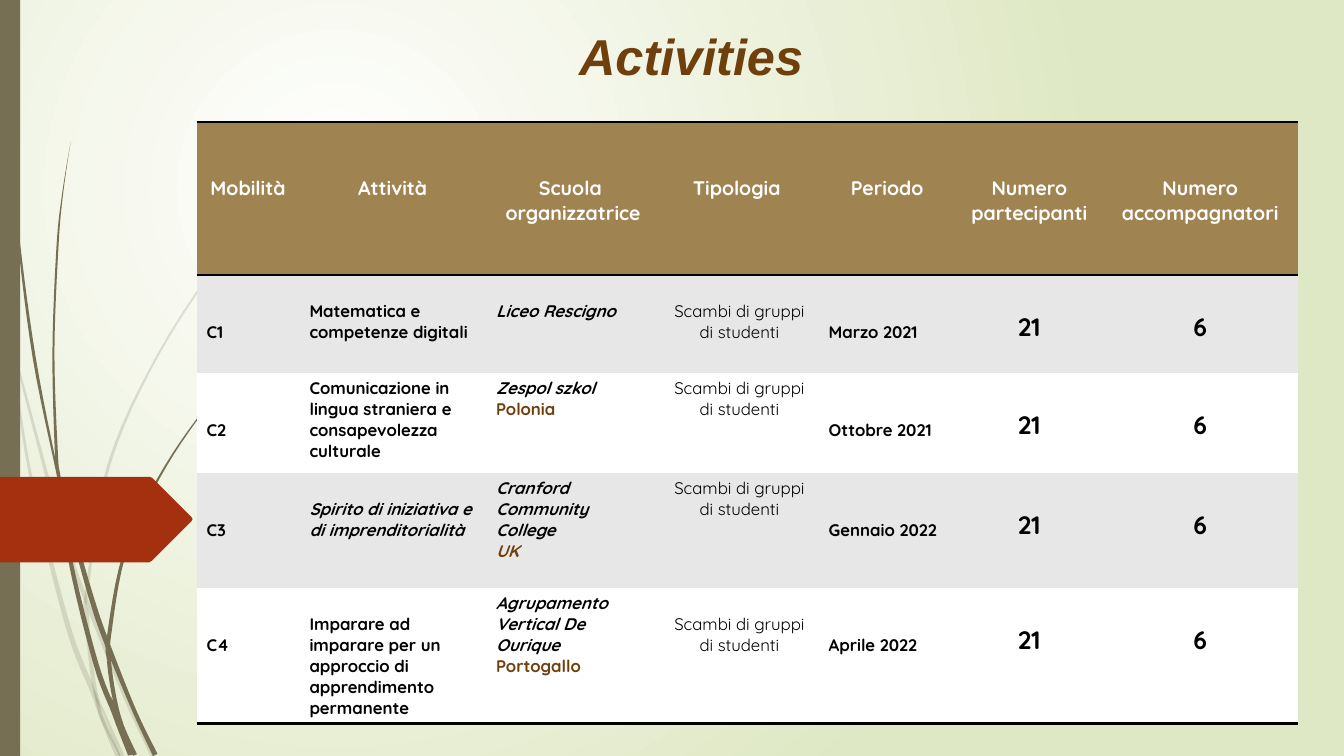
from dataclasses import dataclass
from math import hypot
from typing import NamedTuple

from lxml.etree import SubElement
from pptx import Presentation
from pptx.dml.color import RGBColor
from pptx.enum.shapes import MSO_SHAPE
from pptx.enum.text import PP_ALIGN
from pptx.oxml import parse_xml
from pptx.oxml.ns import nsdecls, qn
from pptx.util import Emu, Pt

PX = 9144
CURVE_STEPS = 6
COLORS = {
    "white": "FFFFFF", "black": "000000", "leaf": "DFE8C4", "grass": "766F54",
    "arrow": "A53010", "header": "9F8351", "band": "E7E7E7", "brown": "6F3F0C",
}
BODY_FONT = "Quicksand"
PLAIN_TABLE_STYLE = "{2D5ABB26-0587-4C30-8999-92F81FD0307C}"
COLUMN_WIDTHS = (102, 185, 173, 157, 136, 146, 193)
ROW_HEIGHTS = (152, 97, 99, 114, 135)
HEADINGS = ("Mobilità", "Attività", "Scuola \norganizzatrice", "Tipologia ", "Periodo",
            "Numero partecipanti", "Numero accompagnatori")


class Node(NamedTuple):
    x: float
    y: float
    width: float


@dataclass
class Blade:
    opacity: int
    joints: tuple[int, ...]
    nodes: list[Node]


@dataclass
class CellText:
    text: str
    lead_lines: int
    size: int = 12
    bold: bool = True
    italic: bool = False
    centered: bool = False
    color: str = "black"


@dataclass
class Activity:
    code: str
    subject: str
    school: str
    country: str
    period: str
    leads: tuple[int, int, int]
    italic_subject: bool = False
    italic_country: bool = False

    def cells(self) -> list[CellText]:
        subject_lead, school_lead, kind_lead = self.leads
        school = f"{self.school}\n{self.country}" if self.country else self.school
        return [
            CellText(self.code, 2),
            CellText(self.subject, subject_lead, italic=self.italic_subject),
            CellText(school, school_lead, italic=True),
            CellText("Scambi di gruppi di studenti", kind_lead, bold=False, centered=True),
            CellText(self.period, 2),
            CellText("21", 1, size=18, centered=True),
            CellText("6", 1, size=18, centered=True),
        ]


ACTIVITIES = (
    Activity("C1", "Matematica e competenze digitali", "Liceo Rescigno", "", "Marzo 2021", (1, 1, 1)),
    Activity("C2", "Comunicazione in lingua straniera e consapevolezza culturale",
             "Zespol szkol", "Polonia", "Ottobre 2021", (0, 0, 0)),
    Activity("C3", "Spirito di iniziativa e di imprenditorialità", "Cranford Community College",
             "UK", "Gennaio 2022", (1, 0, 0), italic_subject=True, italic_country=True),
    Activity("C4", "Imparare ad imparare per un approccio di apprendimento permanente",
             "Agrupamento Vertical De Ourique", "Portogallo", "Aprile 2022", (1, 0, 1)),
)
BLADES = (
    Blade(20, (2, 4), [Node(0, 290, 4), Node(9, 341, 3), Node(14, 350, 2), Node(60, 521, 4),
                       Node(86, 597, 4), Node(125, 693, 4), Node(152, 750, 5)]),
    Blade(20, (4,), [Node(12, 352, 2), Node(30, 470, 3), Node(67, 620, 5), Node(93, 688, 5),
                     Node(101, 713, 3), Node(117, 750, 5)]),
    Blade(20, (5, 6, 9), [Node(312, 153, 0), Node(268, 198, 1), Node(228, 244, 2),
                          Node(159, 348, 2), Node(108, 461, 3), Node(86, 587, 3),
                          Node(86, 609, 4), Node(89, 646, 4), Node(95, 688, 4),
                          Node(105, 711, 2), Node(121, 750, 5)]),
    Blade(20, (), [Node(93, 683, 0), Node(101, 711, 4), Node(119, 750, 1)]),
    Blade(100, (4, 5, 7), [Node(4, 0, 1), Node(7, 110, 1), Node(18, 233, 2), Node(34, 355, 3),
                           Node(56, 465, 2), Node(62, 490, 3), Node(90, 591, 5),
                           Node(108, 643, 5), Node(134, 707, 4), Node(154, 749, 5)]),
    Blade(100, (5, 9), [Node(70, 141, 0), Node(62, 193, 1), Node(57, 245, 2), Node(53, 349, 2),
                        Node(56, 451, 3), Node(59, 476, 3), Node(70, 557, 4), Node(95, 658, 5),
                        Node(113, 706, 5), Node(118, 721, 4), Node(129, 749, 4)]),
    Blade(100, (4, 5, 7), [Node(260, 344, 0), Node(204, 405, 1), Node(157, 475, 2),
                           Node(123, 551, 3), Node(108, 632, 4), Node(108, 655, 4),
                           Node(113, 690, 4), Node(121, 719, 3), Node(134, 749, 4)]),
    Blade(100, (), [Node(110, 691, 0), Node(117, 711, 4), Node(131, 749, 3)]),
)


def px(length: float) -> Emu:
    return Emu(round(length * PX))


def color(name: str) -> RGBColor:
    return RGBColor.from_string(COLORS[name])


def paint(shape, name: str) -> None:
    shape.shadow.inherit = False
    shape.fill.solid()
    shape.fill.fore_color.rgb = color(name)
    shape.line.fill.background()


def smooth(nodes: list[Node]) -> list[Node]:
    padded = [nodes[0], *nodes, nodes[-1]]
    curve = []
    for before, start, end, after in zip(padded, padded[1:], padded[2:], padded[3:]):
        for step in range(CURVE_STEPS):
            t = step / CURVE_STEPS
            curve.append(Node(*(
                b + t * (c - a) / 2 + t**2 * (2 * a - 5 * b + 4 * c - d) / 2
                + t**3 * (3 * b - a - 3 * c + d) / 2
                for a, b, c, d in zip(before, start, end, after))))
    return [*curve, nodes[-1]]


def draw_outline(slide, outline: list[tuple[Emu, Emu]], name: str):
    builder = slide.shapes.build_freeform(*outline[0])
    builder.add_line_segments(outline[1:], close=True)
    shape = builder.convert_to_shape()
    paint(shape, name)
    return shape


def draw_blade(slide, blade: Blade) -> None:
    curve = smooth(blade.nodes)
    left, right = [], []
    for index, node in enumerate(curve):
        before, after = curve[max(index - 1, 0)], curve[min(index + 1, len(curve) - 1)]
        run, rise = after.x - before.x, after.y - before.y
        reach = node.width / 2 / hypot(run, rise)
        left.append((px(node.x - rise * reach), px(node.y + run * reach)))
        right.append((px(node.x + rise * reach), px(node.y - run * reach)))
    stops = (0, *blade.joints, len(blade.nodes) - 1)
    for first, last in zip(stops, stops[1:]):
        part = slice(first * CURVE_STEPS, last * CURVE_STEPS + 1)
        shape = draw_outline(slide, left[part] + right[part][::-1], "grass")
        if blade.opacity < 100:
            tone = next(shape.element.spPr.iter(qn("a:srgbClr")))
            SubElement(tone, qn("a:alpha")).set("val", str(blade.opacity * 1000))


def draw_background(slide) -> None:
    fill = slide.background.fill
    fill.gradient()
    for stop, name in zip(fill.gradient_stops, ("white", "leaf")):
        stop.color.rgb = color(name)
    linear = next(slide.element.iter(qn("a:lin")))
    linear.getparent().replace(linear, parse_xml(
        f'<a:path {nsdecls("a")} path="circle">'
        '<a:fillToRect l="50000" t="50000" r="100000" b="100000"/></a:path>'))


def write_cell(cell, content: CellText, fill: str, borders: str) -> None:
    cell.fill.solid()
    cell.fill.fore_color.rgb = color(fill)
    cell.margin_top = px(5 + content.lead_lines * content.size * 1.25 * 100 / 72)
    cell.text_frame.text = content.text
    for para in cell.text_frame.paragraphs:
        para.alignment = PP_ALIGN.CENTER if content.centered else PP_ALIGN.LEFT
        for span in para.runs:
            span.font.name, span.font.size = BODY_FONT, Pt(content.size)
            span.font.bold, span.font.italic = content.bold, content.italic
            span.font.color.rgb = color(content.color)
    for position, side in enumerate(borders):
        cell._tc.get_or_add_tcPr().insert(position, parse_xml(
            f'<a:ln{side} {nsdecls("a")} w="{Pt(2)}"><a:solidFill>'
            f'<a:srgbClr val="{COLORS["black"]}"/></a:solidFill></a:ln{side}>'))


def draw_table(slide) -> None:
    frame = slide.shapes.add_table(len(ROW_HEIGHTS), len(COLUMN_WIDTHS), px(195), px(121),
                                   px(sum(COLUMN_WIDTHS)), px(sum(ROW_HEIGHTS)))
    table = frame.table
    next(frame.element.iter(qn("a:tableStyleId"))).text = PLAIN_TABLE_STYLE
    for column, width in zip(table.columns, COLUMN_WIDTHS):
        column.width = px(width)
    for row, height in zip(table.rows, ROW_HEIGHTS):
        row.height = px(height)
    for cell, heading in zip(table.rows[0].cells, HEADINGS):
        write_cell(cell, CellText(heading, 2, 14, centered=True, color="white"), "header", "TB")
    for index, activity in enumerate(ACTIVITIES, 1):
        cells = table.rows[index].cells
        borders = "B" if index == len(ACTIVITIES) else ""
        for cell, content in zip(cells, activity.cells()):
            write_cell(cell, content, "band" if index % 2 else "white", borders)
        if activity.country:
            font = cells[2].text_frame.paragraphs[1].runs[0].font
            font.color.rgb, font.italic = color("brown"), activity.italic_country


def draw_title(slide) -> None:
    box = slide.shapes.add_textbox(px(300), px(20), px(771), px(137))
    box.text_frame.word_wrap = True
    box.text_frame.text = "Activities"
    para = box.text_frame.paragraphs[0]
    para.alignment = PP_ALIGN.CENTER
    font = para.runs[0].font
    font.name, font.size, font.bold, font.italic = "Arial", Pt(36), True, True
    font.color.rgb = color("brown")


def main() -> None:
    deck = Presentation()
    deck.slide_width, deck.slide_height = px(1333), px(750)
    page = deck.slides.add_slide(deck.slide_layouts[6])
    draw_background(page)
    for blade in BLADES:
        draw_blade(page, blade)
    paint(page.shapes.add_shape(MSO_SHAPE.RECTANGLE, 0, 0, px(20), px(750)), "grass")
    arrow = [(0, 473), (148, 473), (151, 474), (190, 513), (191, 515),
             (190, 517), (151, 556), (148, 558), (0, 558)]
    draw_outline(page, [(px(x), px(y)) for x, y in arrow], "arrow")
    draw_table(page)
    draw_title(page)
    deck.save("out.pptx")


if __name__ == "__main__":
    main()
